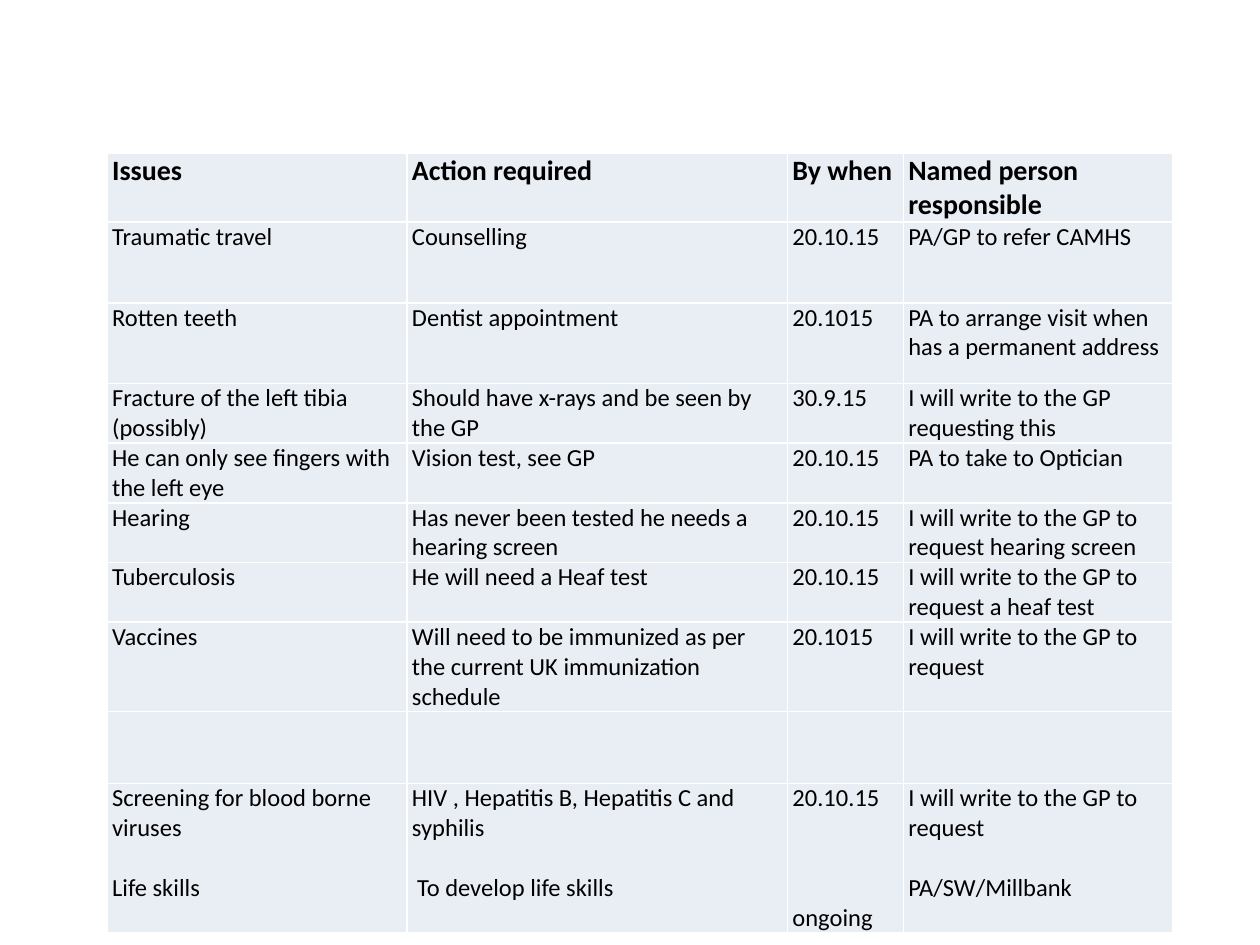
from dataclasses import dataclass

from lxml import etree
from pptx import Presentation
from pptx.dml.color import RGBColor
from pptx.enum.text import PP_ALIGN
from pptx.oxml.ns import qn
from pptx.util import Inches, Pt

LEFT, JUST = PP_ALIGN.LEFT, PP_ALIGN.JUSTIFY


@dataclass(frozen=True)
class Theme:
    font: str = "Calibri"
    ink: str = "000000"
    fill: str = "E9EDF4"
    rule: str = "FFFFFF"
    head: int = 16
    body: int = 14
    line: float = 17.1
    edge: int = 1
    inset: float = 0.04


@dataclass(frozen=True)
class Para:
    """A paragraph set a number of lines below the one before it."""
    text: str
    skip: int = 0
    indent: float = 0


class Deck:
    def __init__(self, theme):
        self.theme = theme
        self.prs = Presentation()
        self.prs.slide_width, self.prs.slide_height = Inches(10), Inches(7.5)
        self.slide = self.prs.slides.add_slide(self.prs.slide_layouts[6])

    def table(self, left, top, height, cols, rows, data):
        frame = self.slide.shapes.add_table(
            len(rows), len(cols), Inches(left), Inches(top),
            Inches(sum(cols)), Inches(height))
        grid = frame.table
        grid.first_row = grid.horz_banding = False
        for col, size in zip(grid.columns, cols):
            col.width = Inches(size)
        for row, size in zip(grid.rows, rows):
            row.height = Inches(size)
        frame.height = Inches(height)
        for r, line in enumerate(data):
            for c, text in enumerate(line):
                cell = grid.cell(r, c)
                self.paint(cell)
                if text:
                    self.label(cell, text, r == 0,
                               JUST if r == 0 and c < len(cols) - 1 else LEFT)

    def paint(self, cell):
        """Give a cell its borders, then its fill."""
        props = cell._tc.get_or_add_tcPr()
        for side in ("lnL", "lnR", "lnT", "lnB"):
            line = etree.SubElement(props, qn(f"a:{side}"),
                                    w=str(Pt(self.theme.edge)))
            solid = etree.SubElement(line, qn("a:solidFill"))
            etree.SubElement(solid, qn("a:srgbClr"), val=self.theme.rule)
        cell.fill.solid()
        cell.fill.fore_color.rgb = RGBColor.from_string(self.theme.fill)

    def label(self, cell, text, bold, align):
        cell.margin_left = cell.margin_right = Inches(self.theme.inset)
        cell.margin_top = cell.margin_bottom = 0
        paras = [Para(text)] if isinstance(text, str) else text
        frame = cell.text_frame
        for i, item in enumerate(paras):
            para = frame.add_paragraph() if i else frame.paragraphs[0]
            para.text = item.text
            para.alignment = align
            if item.skip:
                para.space_before = Pt(item.skip * self.theme.line)
            if item.indent:
                para._p.get_or_add_pPr().set("marL", str(Inches(item.indent)))
            font = para.font
            font.name, font.bold = self.theme.font, bold
            font.size = Pt(self.theme.head if bold else self.theme.body)
            font.color.rgb = RGBColor.from_string(self.theme.ink)


COLS = [2.38, 3.02, 0.92, 2.14]
ROWS = [0.32, 0.64, 0.64] + [0.39] * 5 + [0.57, 0.95]
PLAN = [
    ("Issues", "Action required", "By when", "Named person responsible"),
    ("Traumatic travel", "Counselling", "20.10.15", "PA/GP to refer CAMHS"),
    ("Rotten teeth", "Dentist appointment", "20.1015",
     "PA to arrange visit when has a permanent address"),
    ("Fracture of the left tibia (possibly)",
     "Should have x-rays and be seen by the GP", "30.9.15",
     "I will write to the GP requesting this"),
    ("He can only see fingers with the left eye", "Vision test, see GP",
     "20.10.15", "PA to take to Optician"),
    ("Hearing", "Has never been tested he needs a hearing screen",
     "20.10.15", "I will write to the GP to request hearing screen"),
    ("Tuberculosis", "He will need a Heaf test", "20.10.15",
     "I will write to the GP to request a heaf test"),
    ("Vaccines",
     "Will need to be immunized as per the current UK immunization schedule",
     "20.1015", "I will write to the GP to request"),
    ("", "", "", ""),
    ([Para("Screening for blood borne viruses"), Para("Life skills", 1)],
     [Para("HIV , Hepatitis B, Hepatitis C and syphilis"),
      Para("To develop life skills", 1, 0.04)],
     [Para("20.10.15"), Para("ongoing", 3)],
     [Para("I will write to the GP to request"), Para("PA/SW/Millbank", 1)]),
]


def main():
    deck = Deck(Theme())
    deck.table(0.85, 1.22, 6.13, COLS, ROWS, PLAN)
    deck.prs.save("out.pptx")


if __name__ == "__main__":
    main()
